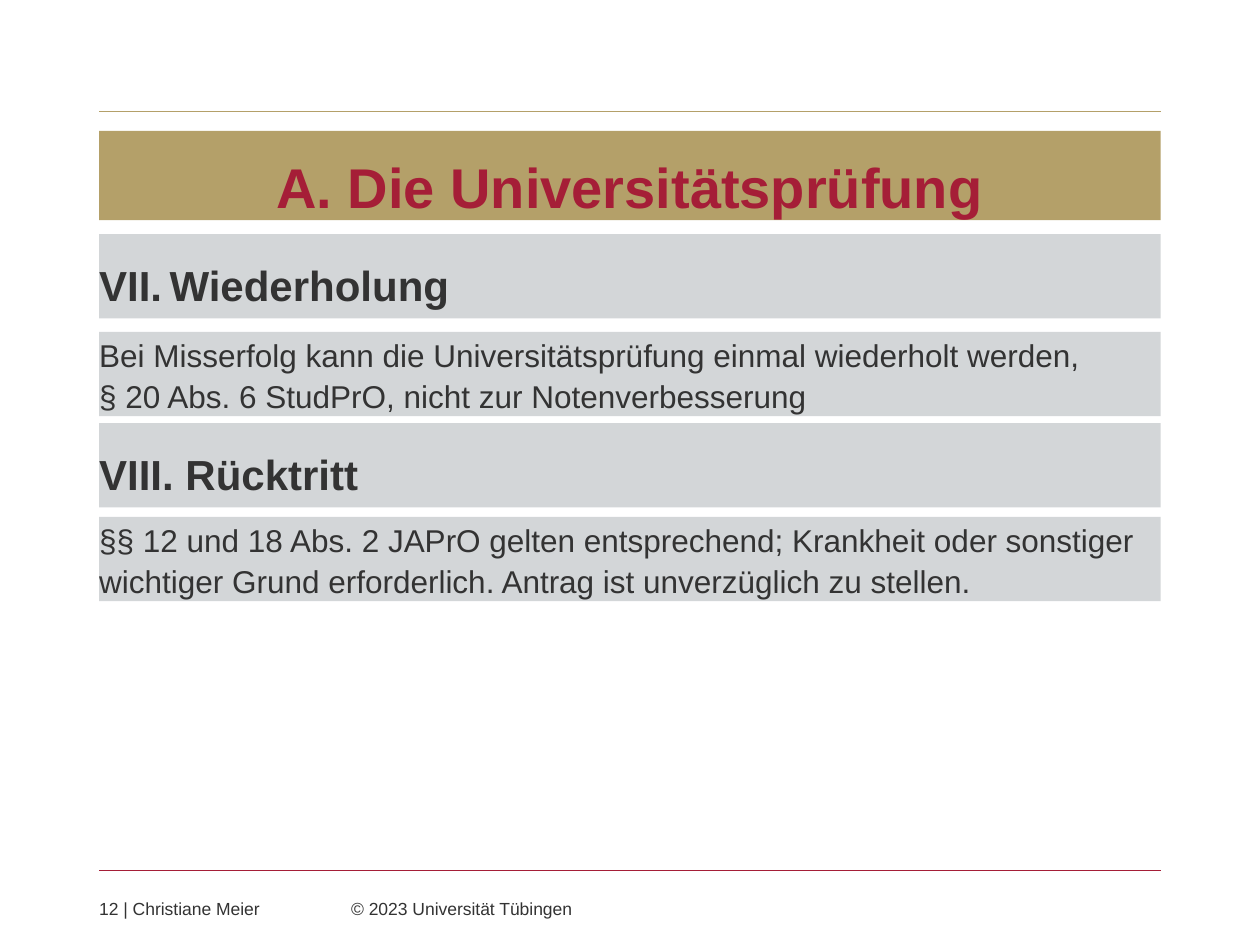
from dataclasses import dataclass
from typing import Optional

from lxml.etree import SubElement
from pptx import Presentation
from pptx.dml.color import RGBColor
from pptx.enum.shapes import MSO_CONNECTOR, MSO_SHAPE
from pptx.enum.text import MSO_ANCHOR, MSO_AUTO_SIZE, PP_ALIGN
from pptx.oxml.ns import qn
from pptx.util import Cm, Pt

COLORS = {"gold": "B4A069", "red": "A51E37", "grey": "D3D6D8", "text": "333333"}
LEFT, WIDTH = 2.0, 21.4
BAND_HEIGHT = 1.7

HEADING = {"size": Pt(24), "bold": True}
BODY = {"size": Pt(18), "bold": False}
TITLE = {"size": Pt(32), "bold": True}
FOOTER = {"size": Pt(10), "bold": False}


@dataclass
class Band:
    top: float
    text: str
    number: Optional[int] = None  # section number, only for headings


@dataclass
class Rule:
    top: float
    color: str


BANDS = [
    Band(4.72, "Wiederholung", 7),
    Band(6.69, "Bei Misserfolg kann die Universitätsprüfung einmal wiederholt werden,\v"
               "§ 20 Abs. 6 StudPrO, nicht zur Notenverbesserung"),
    Band(8.53, " Rücktritt", 8),
    Band(10.42, "§§ 12 und 18 Abs. 2 JAPrO gelten entsprechend; Krankheit oder sonstiger "
                "wichtiger Grund erforderlich. Antrag ist unverzüglich zu stellen."),
]
RULES = [Rule(2.25, "gold"), Rule(17.55, "red")]


def rgb(name: str) -> RGBColor:
    return RGBColor.from_string(COLORS[name])


def fill_frame(frame, text: str, font_format: dict, color: str, anchor=MSO_ANCHOR.TOP):
    """Write one paragraph into a frame without margins and return it."""
    frame_format = {"margin_left": 0, "margin_right": 0, "margin_top": 0,
                    "margin_bottom": 0, "word_wrap": True,
                    "auto_size": MSO_AUTO_SIZE.NONE, "vertical_anchor": anchor}
    for key, value in frame_format.items():
        setattr(frame, key, value)
    paragraph = frame.paragraphs[0]
    paragraph.text = text
    paragraph.alignment = PP_ALIGN.LEFT
    for run in paragraph.runs:
        for key, value in {"name": "Arial", **font_format}.items():
            setattr(run.font, key, value)
        run.font.color.rgb = rgb(color)
    return paragraph


def add_tab(properties, position: float) -> None:
    tabs = SubElement(properties, qn("a:tabLst"))
    SubElement(tabs, qn("a:tab"), pos=str(Cm(position)), algn="l")


def number_heading(paragraph, start: int) -> None:
    """Give the paragraph an upper-case Roman number on a hanging indent."""
    properties = paragraph._p.get_or_add_pPr()
    properties.set("marL", str(Cm(1.42)))
    properties.set("indent", str(Cm(-1.42)))
    SubElement(properties, qn("a:buFont"), typeface="+mj-lt")
    SubElement(properties, qn("a:buAutoNum"), type="romanUcPeriod", startAt=str(start))
    add_tab(properties, 1.24)


def draw_rule(slide, rule: Rule) -> None:
    line = slide.shapes.add_connector(MSO_CONNECTOR.STRAIGHT, Cm(LEFT), Cm(rule.top),
                                      Cm(LEFT + WIDTH), Cm(rule.top))
    line.line.color.rgb = rgb(rule.color)
    line.line.width = Pt(0.75)
    SubElement(line._element.spPr, qn("a:effectLst"))


def draw_title(slide, text: str) -> None:
    title = slide.shapes.title
    place = {"left": Cm(LEFT), "top": Cm(2.64), "width": Cm(WIDTH), "height": Cm(1.8)}
    for key, value in place.items():
        setattr(title, key, value)
    title.fill.solid()
    title.fill.fore_color.rgb = rgb("gold")
    paragraph = fill_frame(title.text_frame, text, TITLE, "red", MSO_ANCHOR.BOTTOM)
    paragraph.alignment = PP_ALIGN.CENTER
    paragraph.line_spacing = 1.5
    paragraph.space_before = Pt(0)


def draw_band(slide, band: Band) -> None:
    box = slide.shapes.add_shape(MSO_SHAPE.RECTANGLE, Cm(LEFT), Cm(band.top),
                                 Cm(WIDTH), Cm(BAND_HEIGHT))
    box.shadow.inherit = False
    box.fill.solid()
    box.fill.fore_color.rgb = rgb("grey")
    box.line.fill.background()
    is_heading = band.number is not None
    paragraph = fill_frame(box.text_frame, band.text, HEADING if is_heading else BODY, "text")
    if is_heading:
        number_heading(paragraph, band.number)
    paragraph.line_spacing = 1.5 if is_heading else 1.1


def draw_footer(slide, text: str) -> None:
    footer = slide.shapes.add_textbox(Cm(LEFT), Cm(18.11), Cm(WIDTH), Cm(0.43))
    paragraph = fill_frame(footer.text_frame, text, FOOTER, "text")
    add_tab(paragraph._p.get_or_add_pPr(), 5.08)


def main() -> None:
    presentation = Presentation()
    presentation.slide_width, presentation.slide_height = Cm(25.4), Cm(19.05)
    slide = presentation.slides.add_slide(presentation.slide_layouts.get_by_name("Title Only"))
    for rule in RULES:
        draw_rule(slide, rule)
    draw_title(slide, "A. Die Universitätsprüfung")
    draw_footer(slide, "12 | Christiane Meier\t© 2023 Universität Tübingen")
    for band in BANDS:
        draw_band(slide, band)
    presentation.save("out.pptx")


if __name__ == "__main__":
    main()
